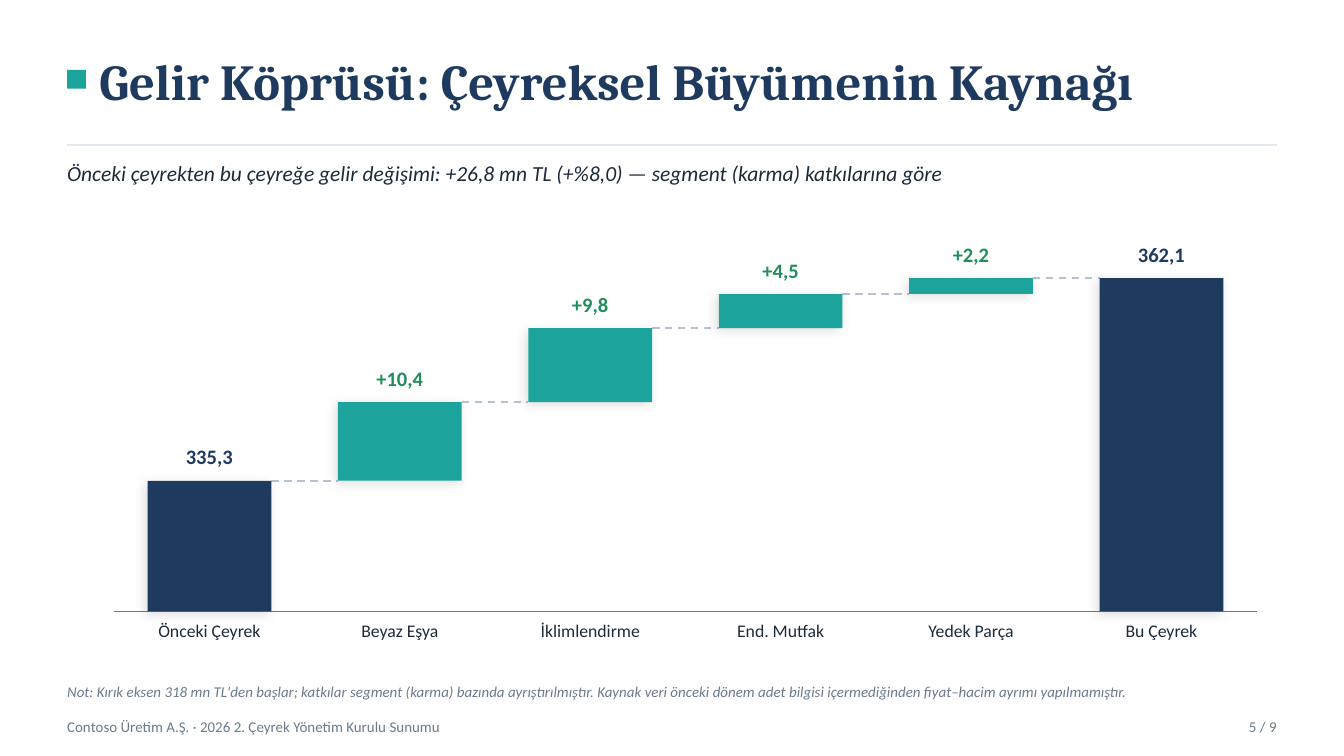
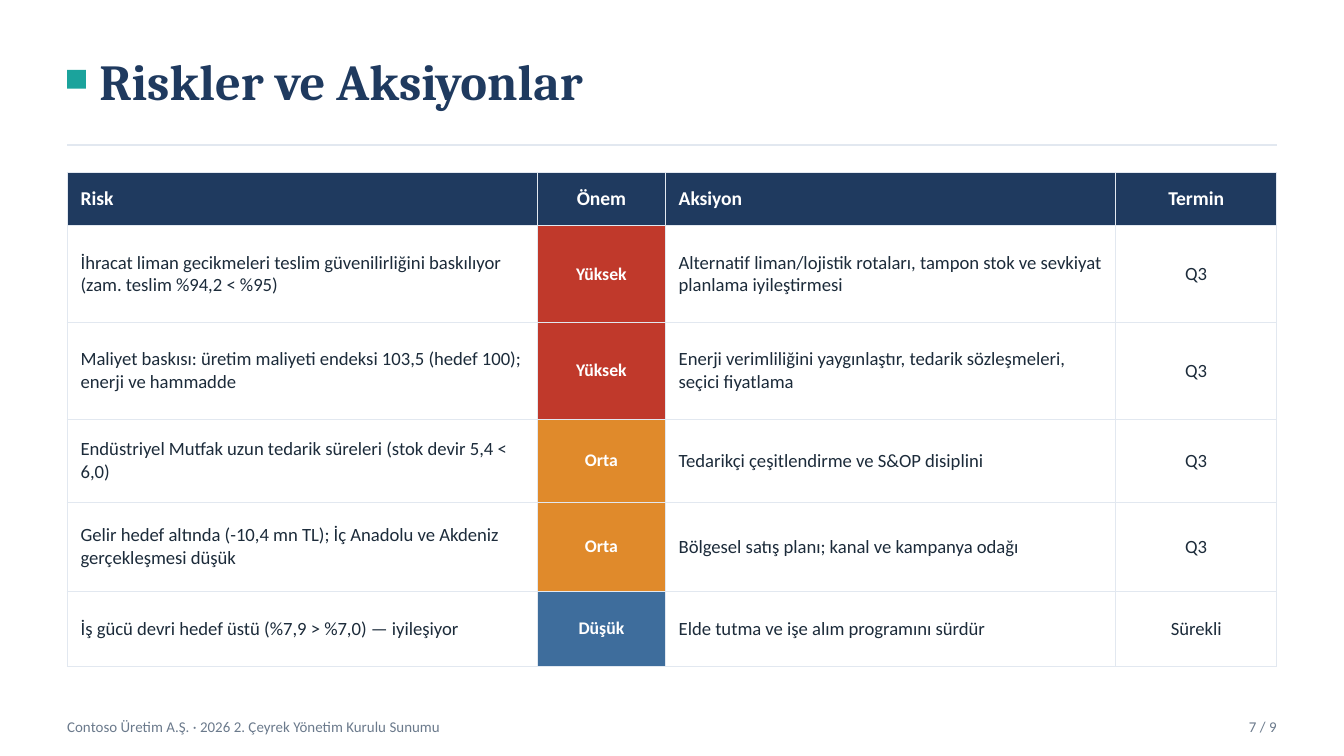
import pptx
import pptx.util
from lxml import etree
from pptx.dml.color import RGBColor
from pptx.enum.dml import MSO_LINE
from pptx.enum.shapes import MSO_CONNECTOR, MSO_SHAPE
from pptx.enum.text import MSO_ANCHOR, MSO_AUTO_SIZE, PP_ALIGN
from pptx.oxml import parse_xml
from pptx.oxml.ns import qn
from pptx.util import Inches, Pt

NAVY = RGBColor(0x1F, 0x3A, 0x5F)
TEAL = RGBColor(0x1B, 0xA3, 0x9C)
GREEN = RGBColor(0x1E, 0x8E, 0x5A)
INK = RGBColor(0x1C, 0x2B, 0x3A)
GRAY = RGBColor(0x6B, 0x7A, 0x8C)
RULE = RGBColor(0xE2, 0xE8, 0xF0)
DASH = RGBColor(0xB7, 0xC2, 0xCF)
WHITE = RGBColor(0xFF, 0xFF, 0xFF)
RED = RGBColor(0xC0, 0x39, 0x2B)
ORANGE = RGBColor(0xE0, 0x8A, 0x2B)
BLUE = RGBColor(0x3E, 0x6D, 0x9C)

HEADING_FONT, BODY_FONT = "Cambria", "Calibri"
LEFT, CENTER, RIGHT = PP_ALIGN.LEFT, PP_ALIGN.CENTER, PP_ALIGN.RIGHT
A_NS = "http://schemas.openxmlformats.org/drawingml/2006/main"
SHADOW_XML = (
    f'<a:outerShdw xmlns:a="{A_NS}" blurRad="{Pt(6)}" dist="{Pt(2)}" '
    'dir="8100000" algn="bl" rotWithShape="0"><a:srgbClr val="000000">'
    '<a:alpha val="12000"/></a:srgbClr></a:outerShdw>'
)


def put_text(box, at, text, size, color, align=LEFT, font=BODY_FONT,
             bold=False, italic=False, anchor=MSO_ANCHOR.MIDDLE):
    box.left, box.top, box.width, box.height = [Inches(v) for v in at]
    frame = box.text_frame
    frame.word_wrap = True
    frame.auto_size = MSO_AUTO_SIZE.NONE
    frame.vertical_anchor = anchor
    frame.margin_left = frame.margin_right = 0
    frame.margin_top = frame.margin_bottom = 0
    frame.text = text
    paragraph = frame.paragraphs[0]
    paragraph.alignment = align
    style = paragraph.runs[0].font
    style.name, style.size, style.bold, style.italic = font, Pt(size), bold, italic
    style.color.rgb = color


def add_rule(slide, x1, x2, y, color, dash=None):
    rule = slide.shapes.add_connector(
        MSO_CONNECTOR.STRAIGHT, Inches(x1), Inches(y), Inches(x2), Inches(y))
    rule.line.color.rgb = color
    rule.line.width = Pt(1)
    if dash:
        rule.line.dash_style = dash
    etree.SubElement(rule._element.spPr, qn("a:effectLst"))


prs = pptx.Presentation()
prs.slide_width, prs.slide_height = Inches(10), Inches(5.625)

# Shared title, marker, rule and footer
slides = []
for heading, page in [("Gelir Köprüsü: Çeyreksel Büyümenin Kaynağı", "5 / 9"),
                      ("Riskler ve Aksiyonlar", "7 / 9")]:
    slide = prs.slides.add_slide(prs.slide_layouts[5])
    slides.append(slide)
    put_text(slide.shapes.title, (0.74, 0.3, 8.8, 0.6), heading, 27, NAVY,
             font=HEADING_FONT, bold=True)
    marker = slide.shapes.add_shape(
        MSO_SHAPE.RECTANGLE, Inches(0.5), Inches(0.52), Inches(0.14), Inches(0.14))
    marker.shadow.inherit = False
    marker.fill.solid()
    marker.fill.fore_color.rgb = TEAL
    marker.line.fill.background()
    add_rule(slide, 0.5, 9.5, 1.08, RULE)
    for at, text, align in [
        ((0.5, 5.28, 7, 0.25),
         "Contoso Üretim A.Ş. · 2026 2. Çeyrek Yönetim Kurulu Sunumu", LEFT),
        ((8.5, 5.28, 1, 0.25), page, RIGHT),
    ]:
        put_text(slide.shapes.add_textbox(0, 0, 0, 0), at, text, 8, GRAY, align)
bridge, risks = slides

# Revenue bridge: subtitle and note
put_text(bridge.shapes.add_textbox(0, 0, 0, 0), (0.5, 1.14, 9, 0.3),
         "Önceki çeyrekten bu çeyreğe gelir değişimi: +26,8 mn TL (+%8,0) — "
         "segment (karma) katkılarına göre", 11.5, INK, italic=True)
put_text(bridge.shapes.add_textbox(0, 0, 0, 0), (0.5, 5.02, 9, 0.25),
         "Not: Kırık eksen 318 mn TL'den başlar; katkılar segment (karma) bazında "
         "ayrıştırılmıştır. Kaynak veri önceki dönem adet bilgisi içermediğinden "
         "fiyat–hacim ayrımı yapılmamıştır.", 8, GRAY, italic=True)

# Revenue bridge: category, label, lower and upper level in mn TL
AXIS_START = 318
steps = [
    ("Önceki Çeyrek", "335,3", AXIS_START, 335.3),
    ("Beyaz Eşya", "+10,4", 335.3, 345.7),
    ("İklimlendirme", "+9,8", 345.7, 355.5),
    ("End. Mutfak", "+4,5", 355.5, 360.0),
    ("Yedek Parça", "+2,2", 360.0, 362.1),
    ("Bu Çeyrek", "362,1", AXIS_START, 362.1),
]
axis_left, axis_right, axis_y = 0.85, 9.35, 4.55
pitch = (axis_right - axis_left) / len(steps)
bar_width = 0.65 * pitch
inches_per_mn = 2.48 / (362.1 - AXIS_START)

add_rule(bridge, axis_left, axis_right, axis_y, GRAY)
for i, (category, label, low, high) in enumerate(steps):
    slot_left = axis_left + i * pitch
    bar_left = slot_left + (pitch - bar_width) / 2
    bar_top = axis_y - (high - AXIS_START) * inches_per_mn
    is_total = low == AXIS_START

    if i < len(steps) - 1:
        add_rule(bridge, bar_left + bar_width, bar_left + pitch, bar_top,
                 DASH, MSO_LINE.DASH)
    bar = bridge.shapes.add_shape(
        MSO_SHAPE.RECTANGLE, Inches(bar_left), Inches(bar_top),
        Inches(bar_width), Inches((high - low) * inches_per_mn))
    bar.fill.solid()
    bar.fill.fore_color.rgb = NAVY if is_total else TEAL
    bar.line.fill.background()
    bar.shadow.inherit = False
    bar._element.spPr.find(qn("a:effectLst")).append(parse_xml(SHADOW_XML))

    put_text(bridge.shapes.add_textbox(0, 0, 0, 0),
             (slot_left, bar_top - 0.32, pitch, 0.28), label, 11,
             NAVY if is_total else GREEN, CENTER, bold=True)
    put_text(bridge.shapes.add_textbox(0, 0, 0, 0),
             (slot_left - 0.03, axis_y + 0.06, pitch + 0.06, 0.5), category, 9.5,
             INK, CENTER, anchor=MSO_ANCHOR.TOP)

# Risk table
risk_rows = [
    ("Risk", "Önem", "Aksiyon", "Termin"),
    ("İhracat liman gecikmeleri teslim güvenilirliğini baskılıyor "
     "(zam. teslim %94,2 < %95)", "Yüksek",
     "Alternatif liman/lojistik rotaları, tampon stok ve sevkiyat planlama "
     "iyileştirmesi", "Q3"),
    ("Maliyet baskısı: üretim maliyeti endeksi 103,5 (hedef 100); enerji ve "
     "hammadde", "Yüksek",
     "Enerji verimliliğini yaygınlaştır, tedarik sözleşmeleri, seçici fiyatlama",
     "Q3"),
    ("Endüstriyel Mutfak uzun tedarik süreleri (stok devir 5,4 < 6,0)", "Orta",
     "Tedarikçi çeşitlendirme ve S&OP disiplini", "Q3"),
    ("Gelir hedef altında (-10,4 mn TL); İç Anadolu ve Akdeniz gerçekleşmesi "
     "düşük", "Orta", "Bölgesel satış planı; kanal ve kampanya odağı", "Q3"),
    ("İş gücü devri hedef üstü (%7,9 > %7,0) — iyileşiyor", "Düşük",
     "Elde tutma ve işe alım programını sürdür", "Sürekli"),
]
severity_colors = {"Yüksek": RED, "Orta": ORANGE, "Düşük": BLUE}
column_widths = [3.5, 0.95, 3.35, 1.2]
row_heights = [0.4, 0.72, 0.72, 0.62, 0.66, 0.56]

risk_table = risks.shapes.add_table(
    len(risk_rows), len(column_widths), Inches(0.5), Inches(1.28),
    Inches(sum(column_widths)), Inches(sum(row_heights))).table
risk_table.first_row = risk_table.horz_banding = False
for column, width in zip(risk_table.columns, column_widths):
    column.width = Inches(width)
for row, height in zip(risk_table.rows, row_heights):
    row.height = Inches(height)

for r, entries in enumerate(risk_rows):
    for c, entry in enumerate(entries):
        if r == 0:
            fill, color, size, bold = NAVY, WHITE, 10.5, True
        elif c == 1:
            fill, color, size, bold = severity_colors[entry], WHITE, 9.5, True
        else:
            fill, color, size, bold = WHITE, INK, 10, False
        cell = risk_table.cell(r, c)
        cell.text = entry
        cell.vertical_anchor = MSO_ANCHOR.MIDDLE
        paragraph = cell.text_frame.paragraphs[0]
        paragraph.alignment = CENTER if c in (1, 3) else LEFT
        style = paragraph.runs[0].font
        style.name, style.size, style.bold = BODY_FONT, Pt(size), bold
        style.color.rgb = color
        # Borders come before the fill in the cell properties
        cell_properties = cell._tc.get_or_add_tcPr()
        for side in ("a:lnL", "a:lnR", "a:lnT", "a:lnB"):
            border = etree.SubElement(cell_properties, qn(side), w=str(Pt(0.5)))
            border_fill = etree.SubElement(border, qn("a:solidFill"))
            etree.SubElement(border_fill, qn("a:srgbClr"), val=str(RULE))
        cell.fill.solid()
        cell.fill.fore_color.rgb = fill

prs.save("out.pptx")
